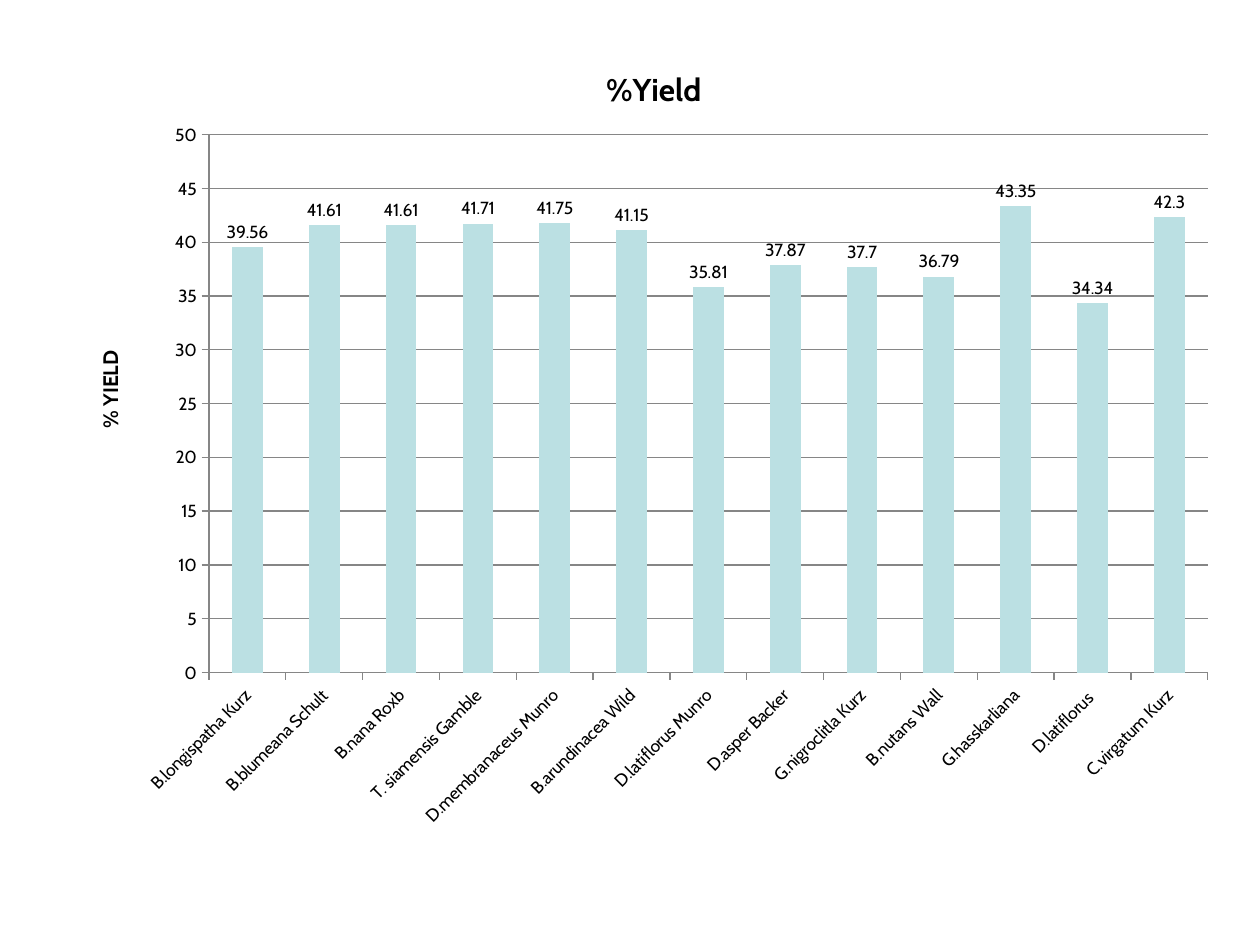
import pptx
import pptx.chart.data
import pptx.dml.color
import pptx.enum.chart
import pptx.oxml
import pptx.oxml.ns
import pptx.util
from pptx.util import Cm, Pt

FONT = "Cabin"
COLORS = {"text": "000000", "bar": "BBE0E3", "line": "868686"}
YIELDS = {
    "B.longispatha Kurz": 39.56,
    "B.blumeana Schult": 41.61,
    "B.nana Roxb": 41.61,
    "T. siamensis Gamble": 41.71,
    "D.membranaceus Munro": 41.75,
    "B.arundinacea Wild": 41.15,
    "D.latiflorus Munro": 35.81,
    "D.asper Backer": 37.87,
    "G.nigroclitla Kurz": 37.7,
    "B.nutans Wall": 36.79,
    "G.hasskarliana": 43.35,
    "D.latiflorus ": 34.34,
    "C.virgatum Kurz": 42.3,
}


def color(name):
    return pptx.dml.color.RGBColor.from_string(COLORS[name])


def format_font(font, size, bold=False):
    for attribute, value in {"name": FONT, "size": Pt(size), "bold": bold}.items():
        setattr(font, attribute, value)
    font.color.rgb = color("text")


def format_line(line):
    line.color.rgb = color("line")
    line.width = Pt(0.75)


def set_layout(element, x, y, size=None):
    """Place a title or plot area by fractions of the chart's size."""
    layout = element.find(pptx.oxml.ns.qn("c:layout"))
    if layout is None:
        layout = pptx.oxml.parse_xml(f"<c:layout {pptx.oxml.ns.nsdecls('c')}/>")
        element.insert(0, layout)
    values = {"xMode": "edge", "yMode": "edge", "x": x, "y": y}
    if size:
        values = {"layoutTarget": "inner", **values, "w": size[0], "h": size[1]}
    children = "".join(f'<c:{tag} val="{value}"/>' for tag, value in values.items())
    layout.append(pptx.oxml.parse_xml(
        f"<c:manualLayout {pptx.oxml.ns.nsdecls('c')}>{children}</c:manualLayout>"))


def rotate_text(element, degrees):
    body = next(element.iter(pptx.oxml.ns.qn("a:bodyPr")))
    body.set("rot", str(degrees * 60000))
    body.set("vert", "horz")


def add_title(owner, text, size, x, y):
    """Title a chart or an axis, and return the title's XML element."""
    title = owner.chart_title if hasattr(owner, "chart_title") else owner.axis_title
    title.text_frame.text = text
    format_font(title.text_frame.paragraphs[0].runs[0].font, size, bold=True)
    element = title.format.line and title._element
    set_layout(element, x, y)
    return element


def format_axis(axis):
    axis.major_tick_mark = pptx.enum.chart.XL_TICK_MARK.OUTSIDE
    axis.minor_tick_mark = pptx.enum.chart.XL_TICK_MARK.NONE
    format_font(axis.tick_labels.font, 10)
    format_line(axis.format.line)


def format_value_axis(axis):
    format_axis(axis)
    for attribute, value in {"minimum_scale": 0, "maximum_scale": 50, "major_unit": 5,
                             "has_major_gridlines": True}.items():
        setattr(axis, attribute, value)
    format_line(axis.major_gridlines.format.line)
    rotate_text(add_title(axis, "% YIELD", 12, 0.025, 0.39), -90)


def format_category_axis(axis):
    format_axis(axis)
    axis.has_major_gridlines = False
    rotate_text(axis._element.find(pptx.oxml.ns.qn("c:txPr")), -45)


def format_columns(plot):
    plot.gap_width = 150
    plot.vary_by_categories = False
    fill = plot.series[0].format.fill
    fill.solid()
    fill.fore_color.rgb = color("bar")
    plot.has_data_labels = True
    labels = plot.data_labels
    labels.show_value = True
    labels.position = pptx.enum.chart.XL_LABEL_POSITION.OUTSIDE_END
    format_font(labels.font, 10)


def add_yield_chart(slide):
    data = pptx.chart.data.CategoryChartData()
    data.categories = list(YIELDS)
    data.add_series("%Yield", list(YIELDS.values()))
    chart = slide.shapes.add_chart(
        pptx.enum.chart.XL_CHART_TYPE.COLUMN_CLUSTERED,
        Cm(1.27), Cm(0.58), Cm(23.55), Cm(16.43), data).chart
    format_font(chart.font, 10)
    chart.has_legend = False
    add_title(chart, "%Yield", 18, 0.46, 0.04)
    format_value_axis(chart.value_axis)
    format_category_axis(chart.category_axis)
    format_columns(chart.plots[0])
    plot_area = chart._chartSpace.chart.plotArea
    set_layout(plot_area, 0.125, 0.13, size=(0.855, 0.66))


def main():
    presentation = pptx.Presentation()
    presentation.slide_width = Cm(25.4)
    presentation.slide_height = Cm(19.05)
    slide = presentation.slides.add_slide(presentation.slide_layouts.get_by_name("Blank"))
    add_yield_chart(slide)
    presentation.save("out.pptx")


if __name__ == "__main__":
    main()
